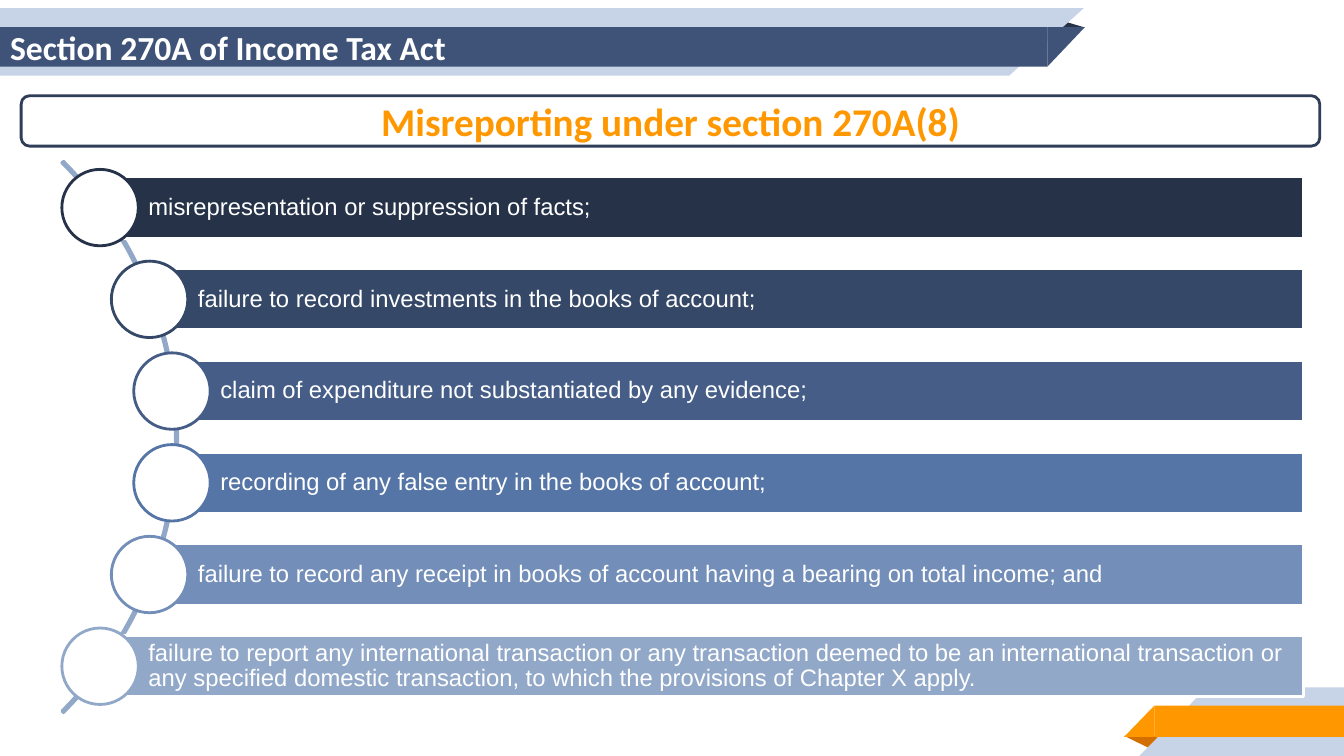
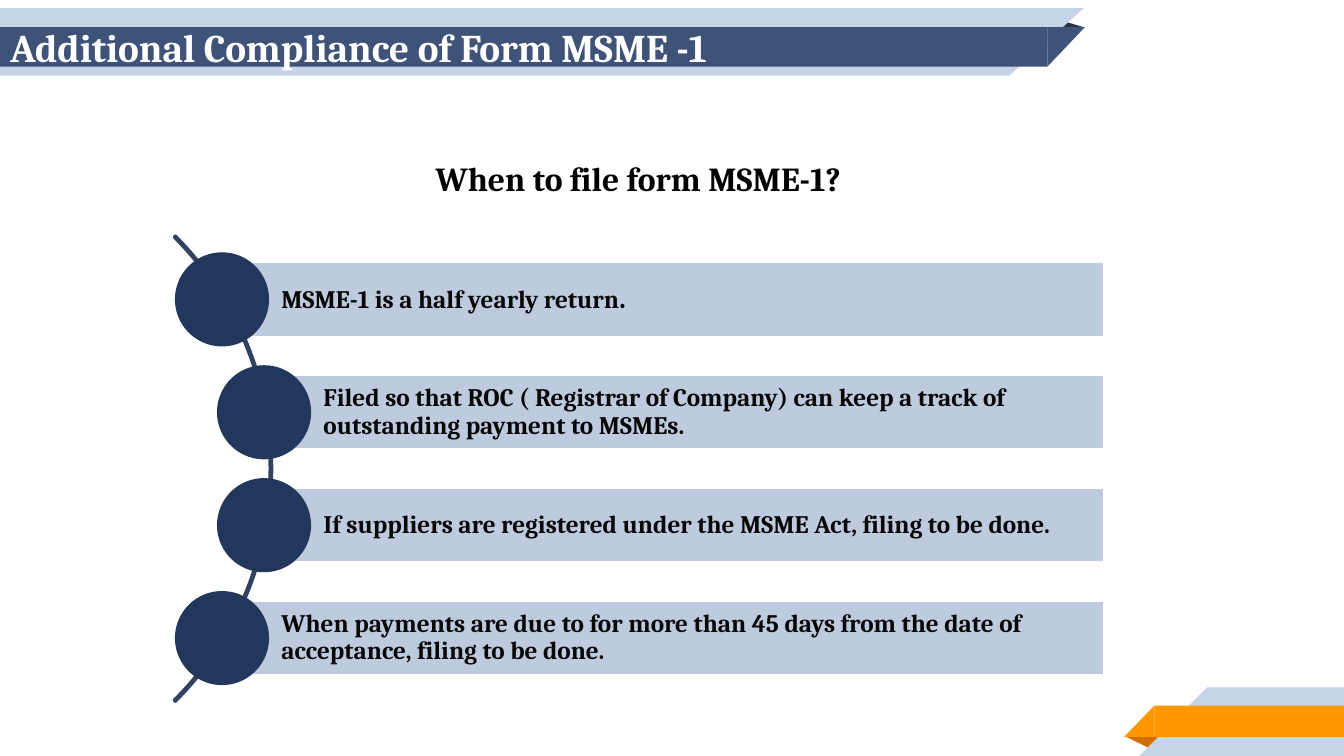
from math import sqrt

from pptx import Presentation
from pptx.dml.color import RGBColor
from pptx.enum.shapes import MSO_SHAPE as SHAPE
from pptx.enum.text import MSO_ANCHOR as ANCHOR, MSO_AUTO_SIZE as AUTO, PP_ALIGN as ALIGN
from pptx.util import Inches, Pt

COLORS = {
    "white": "FFFFFF", "black": "000000", "ink": "080808",
    "pale": "C7D3E6", "band": "3F5378", "fold": "263248",
    "orange": "FF9800", "rust": "D26F00", "frame": "2F3D59",
    "arc": "324260", "bar": "BECBDE", "disc": "23365B",
    "step1": "263248", "step2": "364867", "step3": "465E87",
    "step4": "5575A6", "step5": "738EB8", "step6": "92A8C8",
}
STEPS = [f"step{i}" for i in range(1, 7)]

DECOR = [
    (SHAPE.ISOSCELES_TRIANGLE, (10.01, 0.12, 0.74, 0.15), "fold", 0, False),
    (SHAPE.RECTANGLE, (0, 0.08, 10.01, 0.67), "pale", 0, False),
    (SHAPE.RIGHT_TRIANGLE, (10.01, 0.08, 0.74, 0.67), "pale", 180, True),
    (SHAPE.RECTANGLE, (0, 0.27, 10.39, 0.39), "band", 0, False),
    (SHAPE.RIGHT_TRIANGLE, (10.39, 0.27, 0.37, 0.39), "band", 180, True),
    (SHAPE.ISOSCELES_TRIANGLE, (11.15, 7.3, 0.39, 0.13), "rust", 180, False),
    (SHAPE.RECTANGLE, (11.97, 6.82, 1.37, 0.68), "pale", 0, False),
    (SHAPE.RIGHT_TRIANGLE, (11.3, 6.82, 0.67, 0.68), "pale", 0, True),
    (SHAPE.RECTANGLE, (11.45, 7, 1.89, 0.31), "orange", 0, False),
    (SHAPE.RIGHT_TRIANGLE, (11.15, 7, 0.3, 0.31), "orange", 0, True),
]

MISREPORTING = [
    "misrepresentation or suppression of facts;",
    "failure to record investments in the books of account;",
    "claim of expenditure not substantiated by any evidence;",
    "recording of any false entry in the books of account;",
    "failure to record any receipt in books of account having a bearing on total income; and",
    "failure to report any international transaction or any transaction deemed to be an "
    "international transaction or any specified domestic transaction, to which the "
    "provisions of Chapter X apply.",
]
FILING = [
    "MSME-1 is a half yearly return",
    "Filed so that ROC ( Registrar of Company) can keep a track of outstanding payment to MSMEs.",
    "If suppliers are registered under the MSME Act, filing to be done.",
    "When payments are due to for more than 45 days from the date of acceptance, filing to be done.",
]


def rgb(name):
    """Return the named colour."""
    return RGBColor.from_string(COLORS[name])


def inches(box):
    """Convert a box of numbers to lengths."""
    return [Inches(v) for v in box]


def add_shape(slide, kind, box, fill=None, line=None):
    """Add a flat preset shape with an optional fill and 2 pt line."""
    sp = slide.shapes.add_shape(kind, *inches(box))
    sp.shadow.inherit = False
    if fill:
        sp.fill.solid()
        sp.fill.fore_color.rgb = rgb(fill)
    else:
        sp.fill.background()
    if line:
        sp.line.color.rgb = rgb(line)
        sp.line.width = Pt(2)
    else:
        sp.line.fill.background()
    return sp


def set_text(tf, text, size, font, color, bold=True, align=ALIGN.LEFT):
    """Write one styled paragraph and return it."""
    tf.word_wrap = True
    p = tf.paragraphs[0]
    p.text = text
    p.alignment = align
    p.font.size = Pt(size)
    p.font.name = font
    p.font.bold = bold
    p.font.color.rgb = rgb(color)
    return p


def set_margins(tf, left, rest):
    """Set the left inset apart from the other three."""
    tf.margin_left = Inches(left)
    tf.margin_top = tf.margin_right = tf.margin_bottom = Inches(rest)


def move_decor_to_layout(slide):
    """Draw the header and corner ribbons and move them to the layout."""
    tree = slide.slide_layout.shapes.element
    for i, (kind, box, fill, turn, flip) in enumerate(DECOR):
        sp = add_shape(slide, kind, box, fill)
        sp.rotation = turn
        if kind == SHAPE.ISOSCELES_TRIANGLE:
            sp.adjustments[0] = 0.324
        if flip:
            sp.element.spPr.xfrm.set("flipH", "1")
        tree.insert(2 + i, sp.element)


def add_title(slide, text, size, font):
    """Place the title on the header band."""
    sp = slide.shapes.title
    sp.left, sp.top, sp.width, sp.height = inches((0, 0.14, 10.76, 0.65))
    tf = sp.text_frame
    tf.auto_size = AUTO.NONE
    tf.vertical_anchor = ANCHOR.MIDDLE
    set_margins(tf, 0.1, 0.1)
    set_text(tf, text, size, font, "white")


def add_arc_list(slide, box, pitch, items, arc, bars, discs, rings, **text_style):
    """Draw bars whose discs follow a quarter arc, and return the bars."""
    left, top, width, height = box
    radius = height / sqrt(2)
    cx, cy = left - height / 2, top + height / 2
    bar_h = pitch / 1.5
    disc = 1.25 * bar_h
    sp = add_shape(slide, SHAPE.BLOCK_ARC,
                   (cx - radius, cy - radius, 2 * radius, 2 * radius), line=arc)
    for i, value in enumerate((189, 27, 0.003)):
        sp.adjustments[i] = value
    shapes = []
    for i, (item, fill, disc_fill, ring) in enumerate(zip(items, bars, discs, rings)):
        dy = (i - (len(items) - 1) / 2) * pitch
        x, y = cx + sqrt(radius ** 2 - dy ** 2) - 0.03, cy + dy
        sp = add_shape(slide, SHAPE.RECTANGLE,
                       (x, y - bar_h / 2, left + width - x, bar_h), fill, "white")
        tf = sp.text_frame
        tf.vertical_anchor = ANCHOR.MIDDLE
        set_margins(tf, 0.79 * bar_h, 0.05)
        set_text(tf, item, **text_style).line_spacing = 0.9
        shapes.append(sp)
        add_shape(slide, SHAPE.OVAL, (x - disc / 2, y - disc / 2, disc, disc), disc_fill, ring)
    return shapes


def build_misreporting(slide):
    """Fill the slide on misreporting."""
    add_title(slide, "Section 270A of Income Tax Act", 24, "Calibri")
    sp = add_shape(slide, SHAPE.ROUNDED_RECTANGLE, (0.21, 0.95, 12.88, 0.5), line="frame")
    sp.text_frame.vertical_anchor = ANCHOR.MIDDLE
    set_text(sp.text_frame, "Misreporting under section 270A(8)", 28, "Calibri", "orange",
             align=ALIGN.CENTER)
    add_arc_list(slide, (0.63, 1.6, 12.3, 5.47), 0.91, MISREPORTING, "step6",
                 STEPS, ["white"] * 6, STEPS,
                 size=17, font="Arial", color="white", bold=False)


def build_filing(slide):
    """Fill the slide on filing the form."""
    add_title(slide, "Additional Compliance of Form MSME -1", 28, "Cambria")
    bars = add_arc_list(slide, (1.74, 2.34, 9.21, 4.62), 1.12, FILING, "arc",
                        ["bar"] * 4, ["disc"] * 4, [None] * 4,
                        size=18, font="Cambria", color="ink")
    r = bars[0].text_frame.paragraphs[0].add_run()
    r.text = "."
    r.font.size = Pt(20)
    sp = slide.shapes.add_textbox(*inches((1.91, 1.52, 8.84, 0.5)))
    set_text(sp.text_frame, "When to file form MSME-1?", 24, "Cambria", "black",
             align=ALIGN.CENTER)


def main():
    """Build and save the presentation."""
    prs = Presentation()
    prs.slide_width, prs.slide_height = Inches(13.33), Inches(7.5)
    layout = prs.slide_layouts[5]
    for i, build in enumerate((build_misreporting, build_filing)):
        slide = prs.slides.add_slide(layout)
        if i == 0:
            move_decor_to_layout(slide)
        build(slide)
    prs.save("out.pptx")


if __name__ == "__main__":
    main()
